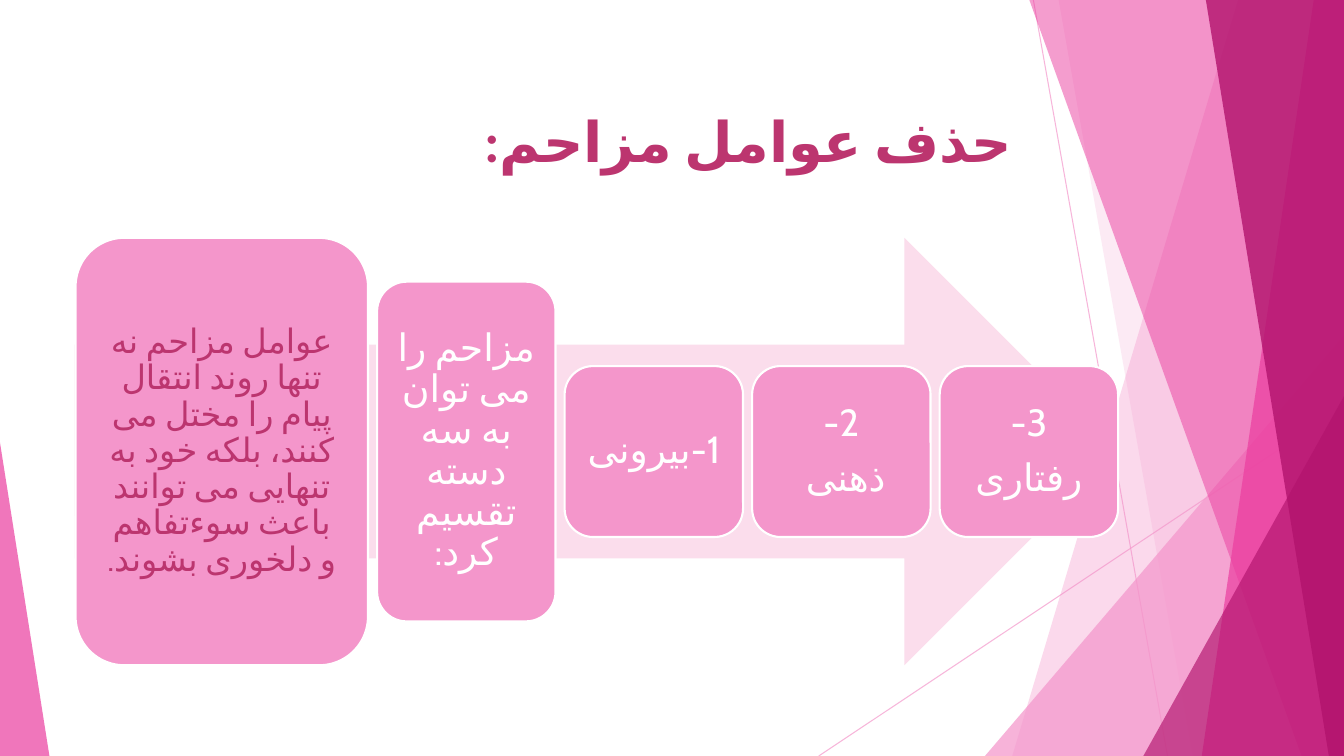
import dataclasses

import lxml.etree
import pptx
import pptx.dml.color
import pptx.enum.dml
import pptx.enum.shapes
import pptx.enum.text
import pptx.oxml
import pptx.oxml.ns
import pptx.util

SHAPES = pptx.enum.shapes.MSO_SHAPE
ALIGN = pptx.enum.text.PP_ALIGN
ANCHOR = pptx.enum.text.MSO_ANCHOR


@dataclasses.dataclass(frozen=True)
class Theme:
    light: str = "F496CB"
    bright: str = "EB3D9F"
    deep: str = "B2136D"
    arrow: str = "FBDDEC"
    heading: str = "BC356F"
    white: str = "FFFFFF"
    title_font: str = "Calibri"
    body_font: str = "Cabin"
    title_size: int = 40
    intro_size: int = 24
    node_size: int = 27


@dataclasses.dataclass(frozen=True)
class Box:
    """A region in inches."""
    left: float
    top: float
    width: float
    height: float

    def emu(self):
        return [pptx.util.Inches(value) for value in
                (self.left, self.top, self.width, self.height)]

    def point(self, column, row):
        """Position on a grid of 100 columns by 100 rows over the box."""
        return (pptx.util.Inches(self.left + self.width * column / 100),
                pptx.util.Inches(self.top + self.height * row / 100))


THEME = Theme()
SLIDE = Box(0, 0, 13.33, 7.5)
TITLE = Box(0.74, 0.67, 9.4, 1.44)
PROCESS = Box(0.74, 2.36, 10.35, 4.24)

# Facets, back to front: (top column, bottom column) bands reach the right
# edge; triangles are (left column, top row, right column, apex).
FACETS = [
    ("band", (92.12, 75.32), THEME.light, 36),
    ("band", (78.77, 88.75), THEME.light, 20),
    ("triangle", (73.29, 44.4, 100, 1), THEME.light, 72),
    ("band", (76.59, 96.85), THEME.bright, 50),
    ("band", (97.75, 89.42), THEME.bright, 70),
    ("band", (89.72, 98.87), THEME.deep, 80),
    ("triangle", (85.07, 52.4, 100, 1), THEME.deep, 66),
    ("triangle", (0, 58.53, 3.68, 0), THEME.bright, 70),
]
HAIRLINES = [((76.89, 0), (86.87, 100)), ((100, 53.73), (60.92, 100))]

# Process nodes: paragraphs, width, share of the arrow's height, size, colour
NODE_WIDTH, NODE_GAP, NODE_INSET = 1.77, 0.09, 0.11
NODES = [
    (["عوامل مزاحم نه تنها روند انتقال پیام را مختل می کنند، بلکه خود به تنهایی "
      "می توانند باعث سوءتفاهم و دلخوری بشوند."],
     2.9, 1, THEME.intro_size, THEME.heading),
    (["مزاحم را می توان به سه دسته تقسیم کرد:"],
     NODE_WIDTH, 0.795, THEME.node_size, THEME.white),
    (["1-بیرونی"], NODE_WIDTH, 0.4, THEME.node_size, THEME.white),
    (["2-", "ذهنی "], NODE_WIDTH, 0.4, THEME.node_size, THEME.white),
    (["3-", "رفتاری"], NODE_WIDTH, 0.4, THEME.node_size, THEME.white),
]


def rgb(colour):
    return pptx.dml.color.RGBColor.from_string(colour)


def set_attributes(target, values):
    for name, value in values.items():
        setattr(target, name, value)


def set_opacity(fill_parent, percent):
    colour = fill_parent.find(".//" + pptx.oxml.ns.qn("a:srgbClr"))
    alpha = lxml.etree.SubElement(colour, pptx.oxml.ns.qn("a:alpha"))
    alpha.set("val", str(percent * 1000))


def paint(shape, colour, opacity=100, outline=None):
    shape.shadow.inherit = False
    shape.fill.solid()
    shape.fill.fore_color.rgb = rgb(colour)
    if opacity < 100:
        set_opacity(shape._element.spPr, opacity)
    if outline:
        shape.line.color.rgb = rgb(outline)
        shape.line.width = pptx.util.Pt(1.5)
    else:
        shape.line.fill.background()


def set_persian(run):
    """Mark a run as Persian and use its font for Arabic script too."""
    properties = run._r.get_or_add_rPr()
    properties.set("lang", "fa-IR")
    script_font = lxml.etree.SubElement(properties, pptx.oxml.ns.qn("a:cs"))
    script_font.set("typeface", run.font.name)


def write_text(frame, texts, frame_format, paragraph_format, font_format, colour):
    """Fill a frame with right-to-left paragraphs."""
    set_attributes(frame, frame_format)
    for index, text in enumerate(texts):
        paragraph = frame.add_paragraph() if index else frame.paragraphs[0]
        set_attributes(paragraph, paragraph_format)
        paragraph._p.get_or_add_pPr().set("rtl", "1")
        run = paragraph.add_run()
        run.text = text
        set_attributes(run.font, font_format)
        run.font.color.rgb = rgb(colour)
        set_persian(run)


def add_facets(slide, box):
    # Thin crossing lines
    for start, end in HAIRLINES:
        line = slide.shapes.add_connector(
            pptx.enum.shapes.MSO_CONNECTOR.STRAIGHT,
            *box.point(*start), *box.point(*end))
        line.line.color.rgb = rgb(THEME.light)
        line.line.width = pptx.util.Pt(0.75)
        properties = line._element.spPr
        set_opacity(properties, 70)
        lxml.etree.SubElement(properties, pptx.oxml.ns.qn("a:effectLst"))
    # Translucent bands and triangles
    for kind, geometry, colour, opacity in FACETS:
        if kind == "band":
            top, bottom = geometry
            builder = slide.shapes.build_freeform(*box.point(top, 0), scale=1.0)
            builder.add_line_segments(
                [box.point(100, 0), box.point(100, 100), box.point(bottom, 100)],
                close=True)
            shape = builder.convert_to_shape()
        else:
            left, top, right, apex = geometry
            x, y = box.point(left, top)
            far_x, far_y = box.point(right, 100)
            shape = slide.shapes.add_shape(
                SHAPES.ISOSCELES_TRIANGLE, x, y, far_x - x, far_y - y)
            shape.adjustments[0] = apex
        paint(shape, colour, opacity)


def add_title(slide, box, text):
    title = slide.shapes.title
    set_attributes(title, dict(zip(("left", "top", "width", "height"), box.emu())))
    write_text(
        title.text_frame, [text],
        {"word_wrap": True, "vertical_anchor": ANCHOR.TOP,
         "auto_size": pptx.enum.text.MSO_AUTO_SIZE.NONE},
        {"alignment": ALIGN.RIGHT, "line_spacing": 1.5,
         "space_before": pptx.util.Pt(8.5)},
        {"name": THEME.title_font, "size": pptx.util.Pt(THEME.title_size),
         "bold": True},
        THEME.heading)


def add_process(slide, box):
    # Arrow behind the nodes
    arrow = slide.shapes.add_shape(SHAPES.RIGHT_ARROW, *box.emu())
    paint(arrow, THEME.arrow)
    # Nodes, centred on the arrow's axis
    inset = pptx.util.Inches(NODE_INSET)
    frame_format = {"word_wrap": True, "vertical_anchor": ANCHOR.MIDDLE}
    for side in ("left", "top", "right", "bottom"):
        frame_format["margin_" + side] = inset
    left = box.left + 0.01
    for texts, width, share, size, colour in NODES:
        height = box.height * share
        node = Box(left, box.top + (box.height - height) / 2, width, height)
        shape = slide.shapes.add_shape(SHAPES.ROUNDED_RECTANGLE, *node.emu())
        paint(shape, THEME.light, outline=THEME.white)
        write_text(
            shape.text_frame, texts, frame_format,
            {"alignment": ALIGN.CENTER, "line_spacing": 0.9,
             "space_after": pptx.util.Pt(10)},
            {"name": THEME.body_font, "size": pptx.util.Pt(size)}, colour)
        left += width + NODE_GAP


def main():
    presentation = pptx.Presentation()
    presentation.slide_width = pptx.util.Inches(SLIDE.width)
    presentation.slide_height = pptx.util.Inches(SLIDE.height)
    slide = presentation.slides.add_slide(presentation.slide_layouts[5])
    add_facets(slide, SLIDE)
    add_title(slide, TITLE, "حذف عوامل مزاحم:")
    add_process(slide, PROCESS)
    presentation.save("out.pptx")


if __name__ == "__main__":
    main()
